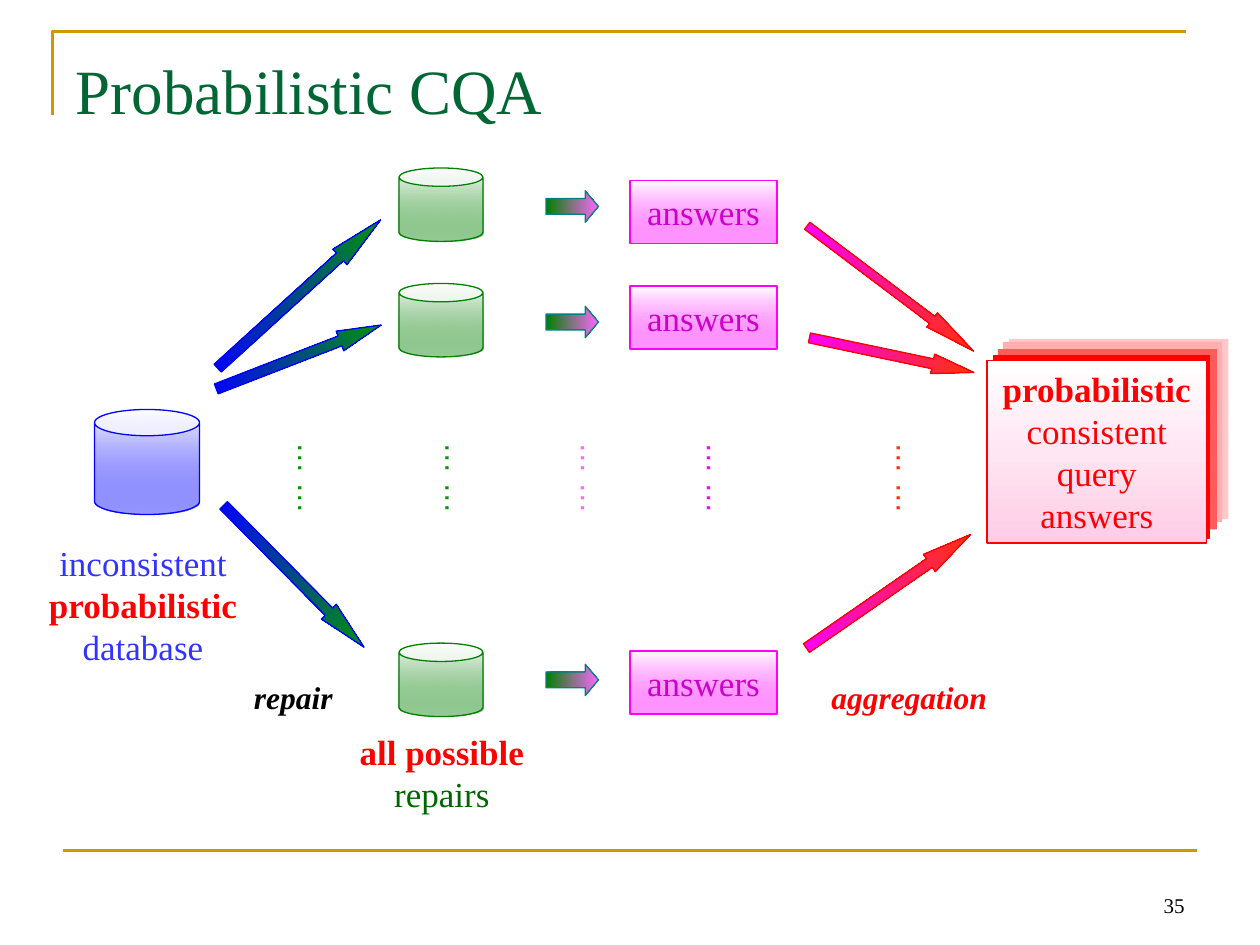
from dataclasses import dataclass

from lxml import etree
from pptx import Presentation
from pptx.dml.color import RGBColor
from pptx.enum.shapes import MSO_CONNECTOR, MSO_SHAPE as Kind
from pptx.enum.text import MSO_ANCHOR as Anchor, PP_ALIGN as Align
from pptx.oxml.ns import qn
from pptx.util import Pt


@dataclass(frozen=True)
class Theme:
    serif: str = "Times New Roman"
    sans: str = "Arial"
    title_size: int = 36
    body_size: int = 20
    note_size: int = 18
    number_size: int = 12
    gold: str = "CC9900"
    title: str = "006633"
    black: str = "000000"
    white: str = "FFFFFF"
    blue: str = "0000FF"
    label_blue: str = "3333FF"
    green: str = "008000"
    bright_green: str = "009900"
    dark_green: str = "006600"
    teal: str = "008080"
    magenta: str = "FF00FF"
    pink: str = "FF66FF"
    purple: str = "CC00CC"
    orange: str = "FF3300"
    red: str = "FF0000"
    pale_pink: str = "FFCDE6"
    shades: tuple = ("FFC9C9", "FFAFAF", "FF5B5B")


theme = Theme()


def add_shape(shapes, kind, box, colors, line=None, angle=0, alpha=None):
    shape = shapes.add_shape(kind, *map(Pt, box))
    shape.shadow.inherit = False
    if len(colors) == 1:
        shape.fill.solid()
        shape.fill.fore_color.rgb = RGBColor.from_string(colors[0])
    else:
        shape.fill.gradient()
        shape.fill.gradient_angle = angle
        for stop, color in zip(shape.fill.gradient_stops, colors):
            stop.color.rgb = RGBColor.from_string(color)
    if alpha:
        last_color = shape.element.spPr.findall(".//" + qn("a:srgbClr"))[-1]
        etree.SubElement(last_color, qn("a:alpha")).set("val", str(alpha * 1000))
    if line:
        shape.line.color.rgb = RGBColor.from_string(line)
        shape.line.width = Pt(0.75)
    else:
        shape.line.fill.background()
    return shape


def write(shape, runs, size, font=theme.serif, align=Align.CENTER, anchor=Anchor.TOP,
          wrap=True, italic=False):
    frame = shape.text_frame
    frame.word_wrap = wrap
    frame.vertical_anchor = anchor
    paragraph = frame.paragraphs[0]
    paragraph.alignment = align
    paragraph.font.name = font
    paragraph.font.size = Pt(size)
    paragraph.font.italic = italic
    for text, color, bold in runs:
        run = paragraph.add_run()
        run.text = text
        run.font.bold = bold
        run.font.color.rgb = RGBColor.from_string(color)
        run.font.name = font


presentation = Presentation()
presentation.slide_width, presentation.slide_height = Pt(720), Pt(540)
slide = presentation.slides.add_slide(presentation.slide_layouts[5])
shapes = slide.shapes

builder = shapes.build_freeform(Pt(30), Pt(66))
builder.add_line_segments([(Pt(30), Pt(18)), (Pt(678), Pt(18))], close=False)
corner = builder.convert_to_shape()
corner.shadow.inherit = False
corner.fill.background()
footer_rule = shapes.add_connector(MSO_CONNECTOR.STRAIGHT, Pt(36), Pt(486), Pt(684), Pt(486))
etree.SubElement(footer_rule._element.spPr, qn("a:effectLst"))
for rule in (corner, footer_rule):
    rule.line.color.rgb = RGBColor.from_string(theme.gold)
    rule.line.width = Pt(1.5)

title = shapes.title
title.left, title.top, title.width, title.height = map(Pt, (36, 21.6, 648, 90))
title.text_frame.margin_top = Pt(8)
write(title, [("Probabilistic CQA", theme.title, False)], theme.title_size, align=Align.LEFT)

number = shapes.add_textbox(Pt(516), Pt(492), Pt(168), Pt(36))
write(number, [("35", theme.black, False)], theme.number_size,
      align=Align.RIGHT, anchor=Anchor.BOTTOM)

add_shape(shapes, Kind.CAN, (54, 234, 60, 60), (theme.white, theme.blue), theme.blue, 270, 40)

for can_top, arrow_top, answer_top in ((96, 109, 103), (162, 175, 163.5), (367.5, 379.5, 372)):
    add_shape(shapes, Kind.CAN, (228, can_top, 48, 42),
              (theme.white, theme.green), theme.green, 270, 40)
    arrow = add_shape(shapes, Kind.RIGHT_ARROW, (312, arrow_top, 30, 18),
                      (theme.green, theme.pink), theme.teal)
    arrow.adjustments[1] = 0.42
    answer = add_shape(shapes, Kind.RECTANGLE, (360, answer_top, 84, 36),
                       (theme.white, theme.magenta), theme.magenta, 270, 40)
    write(answer, [("answers", theme.purple, False)], theme.body_size,
          anchor=Anchor.MIDDLE, wrap=False)

repair_style = (theme.blue, theme.bright_green), theme.blue
aggregation_style = (theme.magenta, theme.orange), theme.red
for box, rotation, head, (colors, line) in (
    ((108, 162, 126, 12), 317.7, 2.63, repair_style),
    ((120.2, 198, 101, 12), 338.8, 2.1, repair_style),
    ((110.9, 323.3, 114, 12), 45.3, 2.38, repair_style),
    ((449.3, 159.8, 119, 10.1), 37, 2.93, aggregation_style),
    ((461.5, 197.3, 96, 11.4), 11.9, 2.11, aggregation_style),
    ((450.7, 331.9, 114, 12), 325.3, 2.38, aggregation_style),
):
    arrow = add_shape(shapes, Kind.RIGHT_ARROW, box, colors, line)
    arrow.adjustments[1] = head
    arrow.rotation = rotation

for left, color in (
    (156, theme.bright_green), (240, theme.bright_green), (317.5, theme.pink),
    (389.5, theme.magenta), (498, theme.orange),
):
    dots = shapes.add_textbox(Pt(left), Pt(245.5), Pt(36), Pt(48))
    write(dots, [("… …", color, False)], theme.note_size, theme.sans, Align.LEFT, wrap=False)
    dots.text_frame._txBody.bodyPr.set("vert", "eaVert")

for box, runs in (
    ((18, 306, 127.5, 79), [("inconsistent ", theme.label_blue, False),
                            ("probabilistic ", theme.red, True),
                            ("database", theme.label_blue, False)]),
    ((192, 414, 121, 55.5), [("all possible ", theme.red, True),
                             ("repairs", theme.dark_green, False)]),
):
    write(shapes.add_textbox(*map(Pt, box)), runs, theme.body_size)

for left, width, text, color in (
    (138, 66, "repair", theme.black), (468, 114, "aggregation", theme.red),
):
    step = shapes.add_textbox(Pt(left), Pt(384), Pt(width), Pt(29))
    write(step, [(text, color, True)], theme.note_size, align=Align.LEFT, italic=True)

stack = shapes.add_group_shape().shapes
for (left, top), shade in zip(((576.7, 193.7), (573.1, 195.4), (570.2, 199.5)), theme.shades):
    add_shape(stack, Kind.RECTANGLE, (left, top, 125.3, 103), (shade,))
add_shape(stack, Kind.RECTANGLE, (568, 203, 123, 104.4), (theme.red,), theme.red)
result = add_shape(stack, Kind.RECTANGLE, (564, 205.9, 125.5, 104.4),
                   (theme.white, theme.pale_pink), theme.red, 270)
write(result, [("probabilistic ", theme.red, True),
               ("consistent query answers", theme.red, False)],
      theme.body_size, anchor=Anchor.MIDDLE)

presentation.save("out.pptx")
